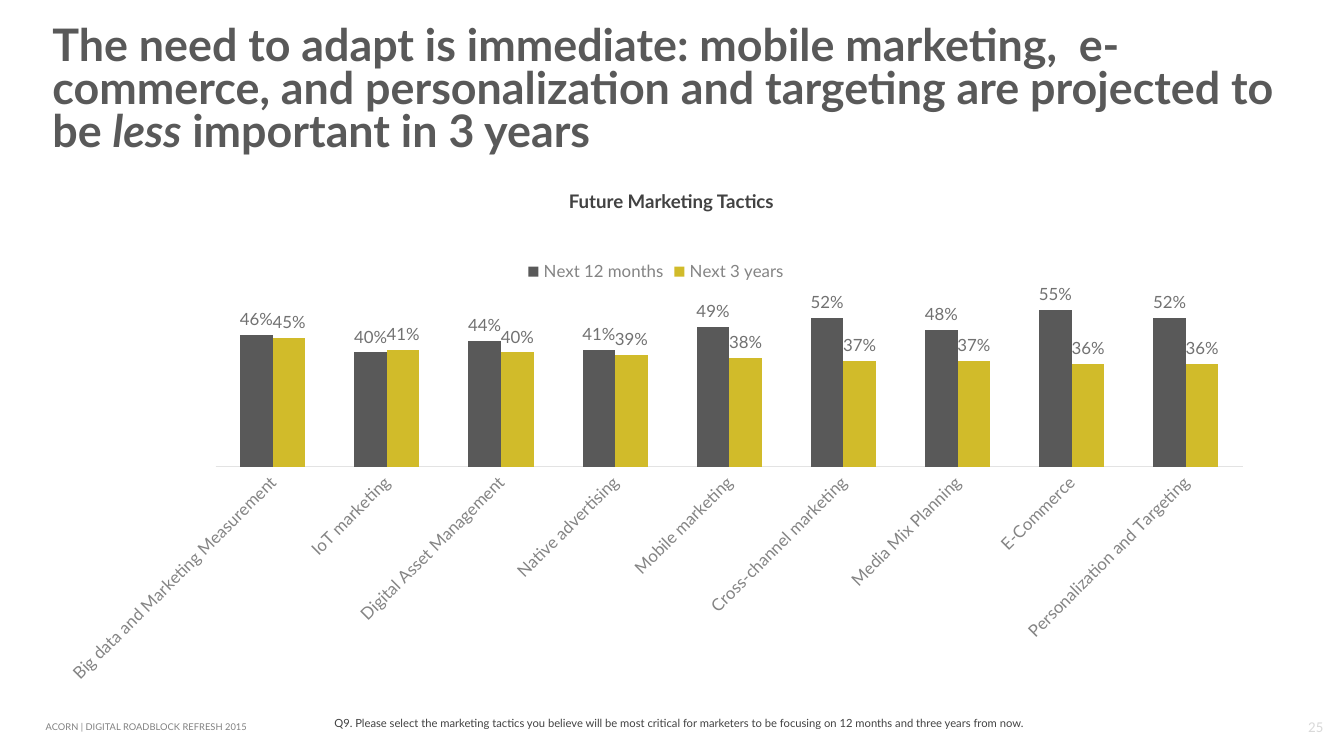
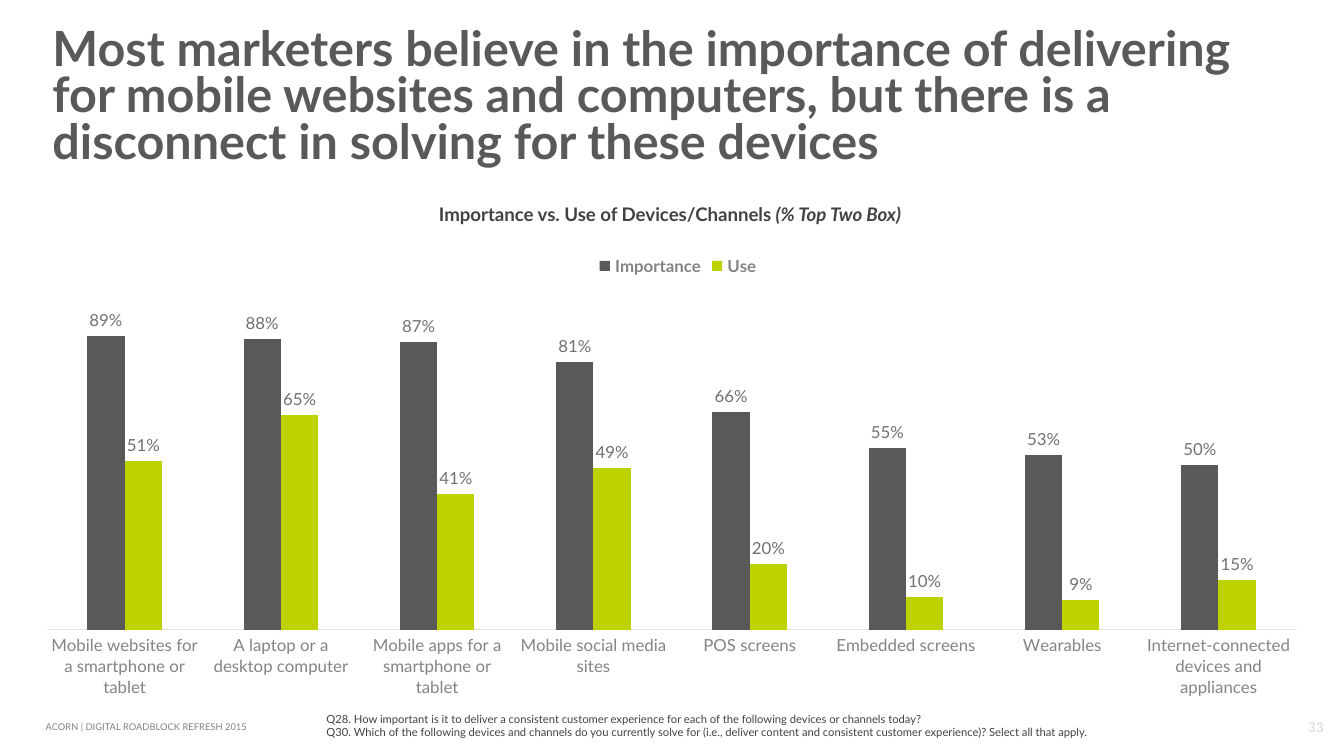
import pptx
import pptx.chart.data
import pptx.dml.color
import pptx.enum.chart
import pptx.enum.text
import pptx.oxml.ns
import pptx.util
from lxml import etree

# Shared look
FONT = "Lato"
DARK = "595959"
INK = "424242"
GREY = "848484"
LABEL = "717171"
RULE = "E3E3E3"
FOOTER = "ACORN | DIGITAL ROADBLOCK REFRESH 2015"
Pt = pptx.util.Pt
ALIGN = pptx.enum.text.PP_ALIGN
ANCHOR = pptx.enum.text.MSO_ANCHOR
qn = pptx.oxml.ns.qn


def color(code):
    return pptx.dml.color.RGBColor.from_string(code)


def style(font, size, code, bold=False, face=FONT):
    font.size = Pt(size)
    font.name = face
    font.bold = bold
    font.color.rgb = color(code)


def write(frame, *lines, size, code=INK, bold=False, face=FONT,
          align=ALIGN.LEFT, anchor=ANCHOR.TOP, inset=(0, 0), space=None):
    """Fill a text frame; words between asterisks are italic."""
    frame.word_wrap = True
    frame.auto_size = pptx.enum.text.MSO_AUTO_SIZE.NONE
    frame.vertical_anchor = anchor
    frame.margin_left = frame.margin_right = Pt(inset[0])
    frame.margin_top = frame.margin_bottom = Pt(inset[1])
    for n, line in enumerate(lines):
        para = frame.add_paragraph() if n else frame.paragraphs[0]
        para.alignment = align
        if space:
            para.line_spacing = space
        for part, words in enumerate(line.split("*")):
            if words:
                run = para.add_run()
                run.text = words
                style(run.font, size, code, bold, face)
                run.font.italic = part % 2 == 1


def place(shape, left, top, width, height):
    shape.left, shape.top = Pt(left), Pt(top)
    shape.width, shape.height = Pt(width), Pt(height)


def add_text(slide, box, *lines, **form):
    shape = slide.shapes.add_textbox(*map(Pt, box))
    write(shape.text_frame, *lines, **form)


def add_page(deck, title, size, box, number):
    """Add a slide with its title, footer and page number."""
    slide = deck.slides.add_slide(deck.slide_layouts[5])
    place(slide.shapes.title, *box)
    write(slide.shapes.title.text_frame, title, size=size, code=DARK, bold=True,
          anchor=ANCHOR.MIDDLE, inset=(7.2, 3.6), space=0.8)
    add_text(slide, (24.5, 386.6, 299.5, 5.8), FOOTER, size=5, code="808080",
             anchor=ANCHOR.MIDDLE)
    add_text(slide, (694.8, 384.5, 20.2, 9.4), number, size=8, code="D9D9D9",
             face="Calibri", align=ALIGN.CENTER, anchor=ANCHOR.BOTTOM)
    return slide


def add_head(slide, left, top, text):
    add_text(slide, (left, top, 581, 12.2), text, size=10, bold=True,
             align=ALIGN.CENTER)


def add_note(slide, box, *lines):
    add_text(slide, box, *lines, size=6, inset=(7.2, 3.6))


def set_plot(chart, *area):
    """Fix the inner plot area as fractions of the chart."""
    plot = chart.element.find(".//" + qn("c:plotArea"))
    for old in plot.findall(qn("c:layout")):
        plot.remove(old)
    layout = etree.Element(qn("c:layout"))
    plot.insert(0, layout)
    manual = etree.SubElement(layout, qn("c:manualLayout"))
    pairs = [("layoutTarget", "inner"), ("xMode", "edge"), ("yMode", "edge")]
    for tag, val in pairs + list(zip("xywh", area)):
        etree.SubElement(manual, qn("c:" + tag)).set("val", str(val))


def add_bars(slide, box, cats, series, gap, top, area, bold=False, turn=0):
    """Add a column chart; series maps a name to its colour and values."""
    data = pptx.chart.data.CategoryChartData(number_format="0%")
    data.categories = cats
    for name, (_, vals) in series.items():
        data.add_series(name, [val / 100 for val in vals])
    kind = pptx.enum.chart.XL_CHART_TYPE.COLUMN_CLUSTERED
    chart = slide.shapes.add_chart(kind, *map(Pt, box), data).chart
    chart.has_title = False
    style(chart.font, 10, INK, face="Cabin")
    set_plot(chart, *area)

    # Legend
    chart.has_legend = True
    chart.legend.position = pptx.enum.chart.XL_LEGEND_POSITION.TOP
    chart.legend.include_in_layout = False
    style(chart.legend.font, 9, GREY, bold)

    # Axes
    axis = chart.category_axis
    axis.major_tick_mark = pptx.enum.chart.XL_TICK_MARK.NONE
    axis.format.line.color.rgb = color(RULE)
    axis.format.line.width = Pt(0.75)
    style(axis.tick_labels.font, 9, GREY)
    if turn:
        body = axis._element.find(qn("c:txPr")).find(qn("a:bodyPr"))
        body.set("rot", str(turn * 60000))
        body.set("vert", "horz")
    scale = chart.value_axis
    scale.minimum_scale, scale.maximum_scale = 0, top
    scale.has_major_gridlines = False
    scale.tick_labels.number_format = "0%"
    scale.tick_labels.number_format_is_linked = False
    scale.visible = False

    # Columns and their labels
    plot = chart.plots[0]
    plot.gap_width, plot.overlap = gap, 0
    plot.vary_by_categories = False
    for bars, (code, _) in zip(plot.series, series.values()):
        bars.format.fill.solid()
        bars.format.fill.fore_color.rgb = color(code)
        bars.invert_if_negative = False
        tags = bars.data_labels
        tags.show_value = True
        tags.number_format = "0%"
        tags.number_format_is_linked = False
        tags.position = pptx.enum.chart.XL_LABEL_POSITION.OUTSIDE_END
        style(tags.font, 9, LABEL)


def add_tactics(deck):
    slide = add_page(
        deck, "The need to adapt is immediate: mobile marketing,  e-commerce, and "
        "personalization and targeting are projected to be *less* important in 3 years",
        24, (20.9, 6.5, 684, 85.7), "25")
    add_note(slide, (172, 380.2, 433.4, 14.4),
             "Q9. Please select the marketing tactics you believe will be most critical "
             "for marketers to be focusing on 12 months and three years from now.")
    add_head(slide, 69.1, 101.5, "Future Marketing Tactics")
    cats = ["Big data and Marketing Measurement", "IoT marketing",
            "Digital Asset Management", "Native advertising", "Mobile marketing",
            "Cross-channel marketing", "Media Mix Planning", "E-Commerce",
            "Personalization and Targeting"]
    series = {
        "Next 12 months": (DARK, [46, 40, 44, 41, 49, 52, 48, 55, 52]),
        "Next 3 years": ("D1BB2A", [45, 41, 40, 39, 38, 37, 37, 36, 36]),
    }
    add_bars(slide, (23.8, 131.8, 655.2, 241.2), cats, series, gap=150, top=0.6,
             area=(0.14, 0.11, 0.84, 0.38), turn=-45)


def add_devices(deck):
    slide = add_page(
        deck, "Most marketers believe in the importance of delivering for mobile "
        "websites and computers, but there is a disconnect in solving for these devices",
        26, (20.9, 11.5, 684, 82.8), "33")
    add_note(slide, (167.8, 378, 433.4, 21.6),
             "Q28. How important is it to deliver a consistent customer experience for "
             "each of the following devices or channels today?",
             "Q30. Which of the following devices and channels do you currently solve for "
             "(i.e., deliver content and consistent customer experience)? "
             "Select all that apply.")
    add_head(slide, 68.4, 108.7,
             "Importance vs. Use of Devices/Channels *(% Top Two Box)*")
    cats = ["Mobile websites for a smartphone or tablet",
            "A laptop or a desktop computer", "Mobile apps for a smartphone or tablet",
            "Mobile social media sites", "POS screens", "Embedded screens",
            "Wearables", "Internet-connected devices and appliances"]
    series = {
        "Importance": (DARK, [89, 88, 87, 81, 66, 55, 53, 50]),
        "Use": ("BED200", [51, 65, 41, 49, 20, 10, 9, 15]),
    }
    add_bars(slide, (18, 128.9, 690.5, 244.8), cats, series, gap=219, top=1,
             area=(0.01, 0.13, 0.97, 0.73), bold=True)


def main():
    deck = pptx.Presentation()
    deck.slide_width, deck.slide_height = Pt(720), Pt(405)
    add_tactics(deck)
    add_devices(deck)
    deck.save("out.pptx")


if __name__ == "__main__":
    main()
